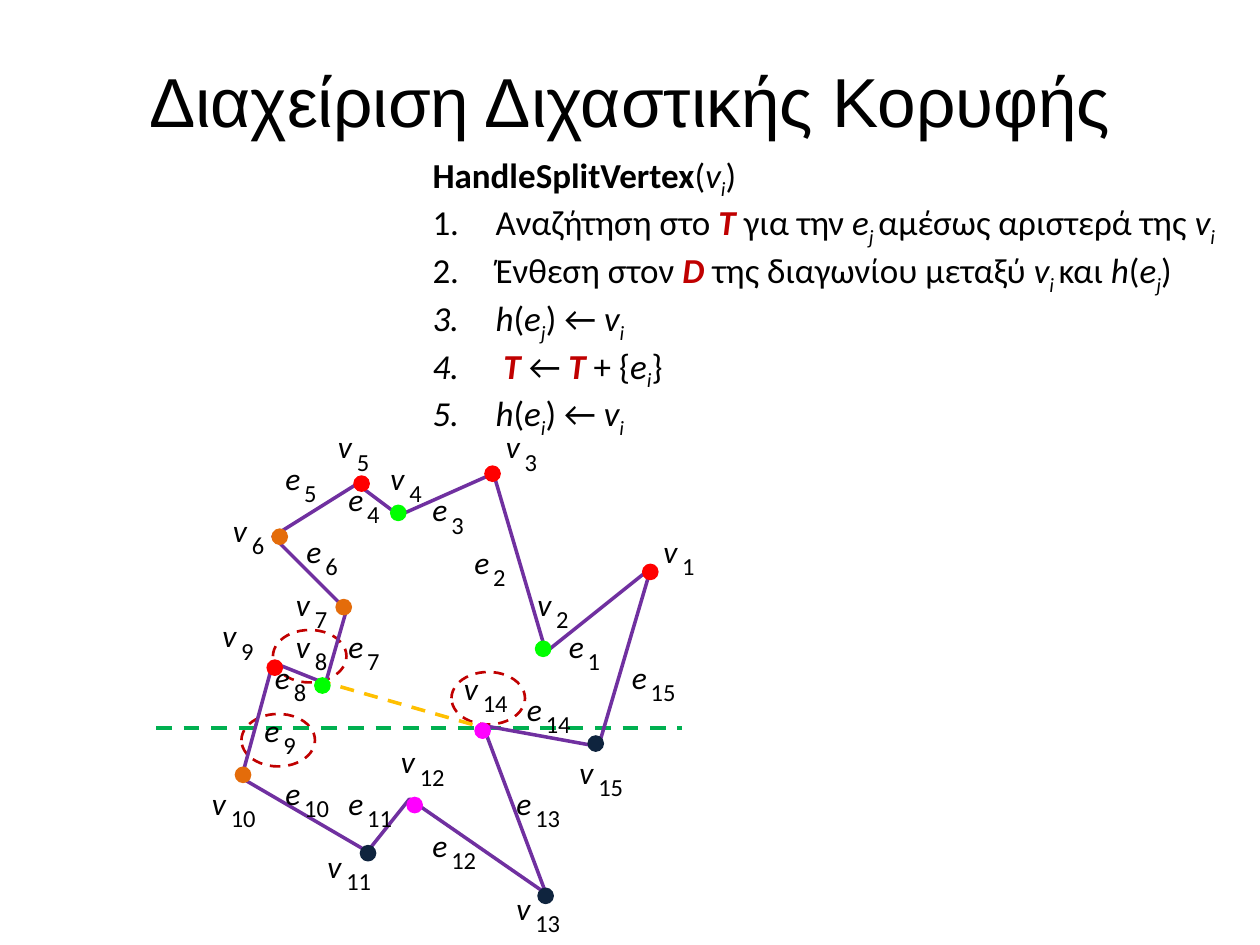
from lxml import etree
from pptx import Presentation
from pptx.dml.color import RGBColor
from pptx.enum.dml import MSO_LINE
from pptx.enum.shapes import MSO_CONNECTOR, MSO_SHAPE
from pptx.enum.text import MSO_ANCHOR, MSO_AUTO_SIZE, PP_ALIGN
from pptx.oxml.ns import qn
from pptx.util import Cm, Pt

OVAL, STRAIGHT, DASH = MSO_SHAPE.OVAL, MSO_CONNECTOR.STRAIGHT, MSO_LINE.DASH
MIDDLE, CENTER = MSO_ANCHOR.MIDDLE, PP_ALIGN.CENTER
FIT = MSO_AUTO_SIZE.SHAPE_TO_FIT_TEXT

BLACK = RGBColor(0x00, 0x00, 0x00)
DARK_RED = RGBColor(0xC0, 0x00, 0x00)
YELLOW = RGBColor(0xFF, 0xC0, 0x00)
SWEEP_GREEN = RGBColor(0x00, 0xB0, 0x50)
PURPLE = RGBColor(0x70, 0x30, 0xA0)
START = RGBColor(0xFF, 0x00, 0x00)
SPLIT = RGBColor(0x00, 0xFF, 0x00)
REGULAR = RGBColor(0xE4, 0x6C, 0x0A)
MERGE = RGBColor(0xFF, 0x00, 0xFF)
END = RGBColor(0x0F, 0x24, 0x3E)

TITLE = "Διαχείριση Διχαστικής Κορυφής"

# Run styles: n normal, b bold, i italic, s subscript, k keyword
STYLES = {
    "n": {},
    "b": {"bold": True},
    "i": {"italic": True},
    "s": {"italic": True},
    "k": {"bold": True, "italic": True},
}
# (first number of the numbered list or None, runs)
ALGORITHM = [
    (None, [("HandleSplitVertex", "b"), ("(", "n"), ("v", "i"), ("i", "s"), (")", "n")]),
    (1, [("Αναζήτηση στο ", "n"), ("T ", "k"), ("για την ", "n"), ("e", "i"),
         ("j ", "s"), ("αμέσως αριστερά της ", "n"), ("v", "i"), ("i", "s")]),
    (1, [("Ένθεση στον ", "n"), ("D ", "k"), ("της διαγωνίου μεταξύ ", "n"),
         ("v", "i"), ("i ", "s"), ("και ", "n"), ("h", "i"), ("(", "n"),
         ("e", "i"), ("j", "s"), (")", "n")]),
    (3, [("h", "i"), ("(", "n"), ("e", "i"), ("j", "s"), (") ← ", "n"),
         ("v", "i"), ("i", "s")]),
    (3, [(" ", "i"), ("T ", "k"), ("← ", "n"), ("T", "k"), (" + {", "n"),
         ("e", "i"), ("i", "s"), ("}", "n")]),
    (3, [("h", "i"), ("(", "n"), ("e", "i"), ("i", "s"), (") ← ", "n"),
         ("v", "i"), ("i", "s")]),
]

# v1 to v15: corner (grid), label (grid), dot centre (cm), kind of vertex
VERTICES = [
    ((62, 54), (62, 50), (13.11, 11.53), START),
    ((52, 62), (50, 55), (10.95, 13.08), SPLIT),
    ((47, 45), (47, 40), (9.93, 9.55), START),
    ((38, 49), (36, 43), (8.03, 10.34), SPLIT),
    ((34, 46), (31, 40), (7.29, 9.75), START),
    ((26, 51), (21, 48), (5.64, 10.82), REGULAR),
    ((33, 58), (27, 55), (6.93, 12.24), REGULAR),
    ((31, 65), (27, 59), (6.5, 13.82), SPLIT),
    ((26, 63), (20, 58), (5.54, 13.46), START),
    ((23, 74), (19, 74), (4.9, 15.62), REGULAR),
    ((35, 81), (30, 80), (7.42, 17.2), END),
    ((39, 76), (37, 70), (8.36, 16.23), MERGE),
    ((52, 85), (48, 84), (11, 18.06), END),
    ((46, 69), (43, 63), (9.73, 14.73), MERGE),
    ((57, 71), (54, 71), (12.01, 14.99), END),
]
# e1 to e15: label (grid)
EDGES = [(53, 59), (44, 51), (40, 46), (32, 45), (26, 43), (28, 50), (32, 59),
         (25, 62), (24, 67), (26, 73), (32, 74), (40, 78), (48, 74), (49, 65),
         (59, 62)]
HIGHLIGHTS = [(43, 64), (23, 68), (26, 60)]

GRID = 2.54 / 12
DROP = 0.02  # polygon and labels sit slightly below the grid lines
DOT = 0.31


def grid(point, drop=0.0):
    x, y = point
    return Cm(x * GRID), Cm(y * GRID + drop)


def style_line(line, color, width, dash=None):
    line.color.rgb = color
    line.width = Pt(width)
    if dash:
        line.dash_style = dash


def add_run(p, text, size, font="Calibri", color=BLACK, **extra):
    r = p.add_run()
    r.text = text
    r.font.color.rgb = color
    for name, value in {"name": font, "size": Pt(size), **extra}.items():
        setattr(r.font, name, value)
    return r


def add_box(shapes, x, y, w, h):
    tf = shapes.add_textbox(x, y, w, h).text_frame
    tf.word_wrap = False
    tf.auto_size = FIT
    return tf


def add_oval(x, y, w, h, color, width, dash=None, filled=False):
    sp = s.shapes.add_shape(OVAL, x, y, w, h)
    sp.shadow.inherit = False
    if filled:
        sp.fill.solid()
        sp.fill.fore_color.rgb = color
    else:
        sp.fill.background()
    style_line(sp.line, color, width, dash)


def add_dashed_line(start, end, color, width):
    line = s.shapes.add_connector(STRAIGHT, *start, *end)
    etree.SubElement(line._element.spPr, qn("a:effectLst"))
    style_line(line.line, color, width, DASH)


def add_label(letter, number, point):
    shapes = s.shapes.add_group_shape().shapes
    x, y = grid(point, DROP)
    tf = add_box(shapes, x, y, Cm(0.8), Cm(1.02))
    add_run(tf.paragraphs[0], letter, 18, italic=True)
    width = Cm(0.89 if number < 10 else 1.14)
    tf = add_box(shapes, x + Cm(0.27), y + Cm(0.39), width, Cm(0.86))
    add_run(tf.paragraphs[0], f" {number}", 14)


prs = Presentation()
prs.slide_width, prs.slide_height = Cm(25.4), Cm(19.05)
s = prs.slides.add_slide(prs.slide_layouts[6])

# Title
tf = s.shapes.add_textbox(Cm(1.9), Cm(0.43), Cm(21.6), Cm(3.18)).text_frame
tf.word_wrap = True
tf.vertical_anchor = MIDDLE
tf.paragraphs[0].alignment = CENTER
add_run(tf.paragraphs[0], TITLE, 39.6, "Arial")

# Algorithm
tf = add_box(s.shapes, Cm(8.47), Cm(2.96), Cm(16.6), Cm(5.38))
for i, (first, runs) in enumerate(ALGORITHM):
    p = tf.add_paragraph() if i else tf.paragraphs[0]
    pPr = p._p.get_or_add_pPr()
    pPr.set("marL", str(Cm(1.27)))
    pPr.set("indent", str(-Cm(1.27)))
    if first:
        bullet = etree.SubElement(pPr, qn("a:buAutoNum"), type="arabicPeriod")
        if first > 1:
            bullet.set("startAt", str(first))
    for text, style in runs:
        color = DARK_RED if style == "k" else BLACK
        r = add_run(p, text, 20, color=color, **STYLES[style])
        if style == "s":
            r._r.get_or_add_rPr().set("baseline", "-25000")

# Highlights, diagonal and sweep line
for point in HIGHLIGHTS:
    add_oval(*grid(point), *grid((7, 5)), DARK_RED, 1.5, DASH)
add_dashed_line(grid((45, 69)), grid((31, 65)), YELLOW, 2)
add_dashed_line((Cm(3.15), Cm(14.68)), (Cm(13.74), Cm(14.68)), SWEEP_GREEN, 2.25)

# Polygon
corners = [grid(corner, DROP) for corner, *_ in VERTICES]
builder = s.shapes.build_freeform(*corners[0])
builder.add_line_segments(corners[1:], close=True)
polygon = builder.convert_to_shape()
polygon.shadow.inherit = False
polygon.fill.background()
style_line(polygon.line, PURPLE, 2)

# Vertex dots
for _, _, (x, y), color in VERTICES:
    add_oval(Cm(x - DOT / 2), Cm(y - DOT / 2), Cm(DOT), Cm(DOT), color, 0.75, filled=True)

# Vertex and edge labels
for letter, points in (("v", [v[1] for v in VERTICES]), ("e", EDGES)):
    for number, point in enumerate(points, 1):
        add_label(letter, number, point)

prs.save("out.pptx")
